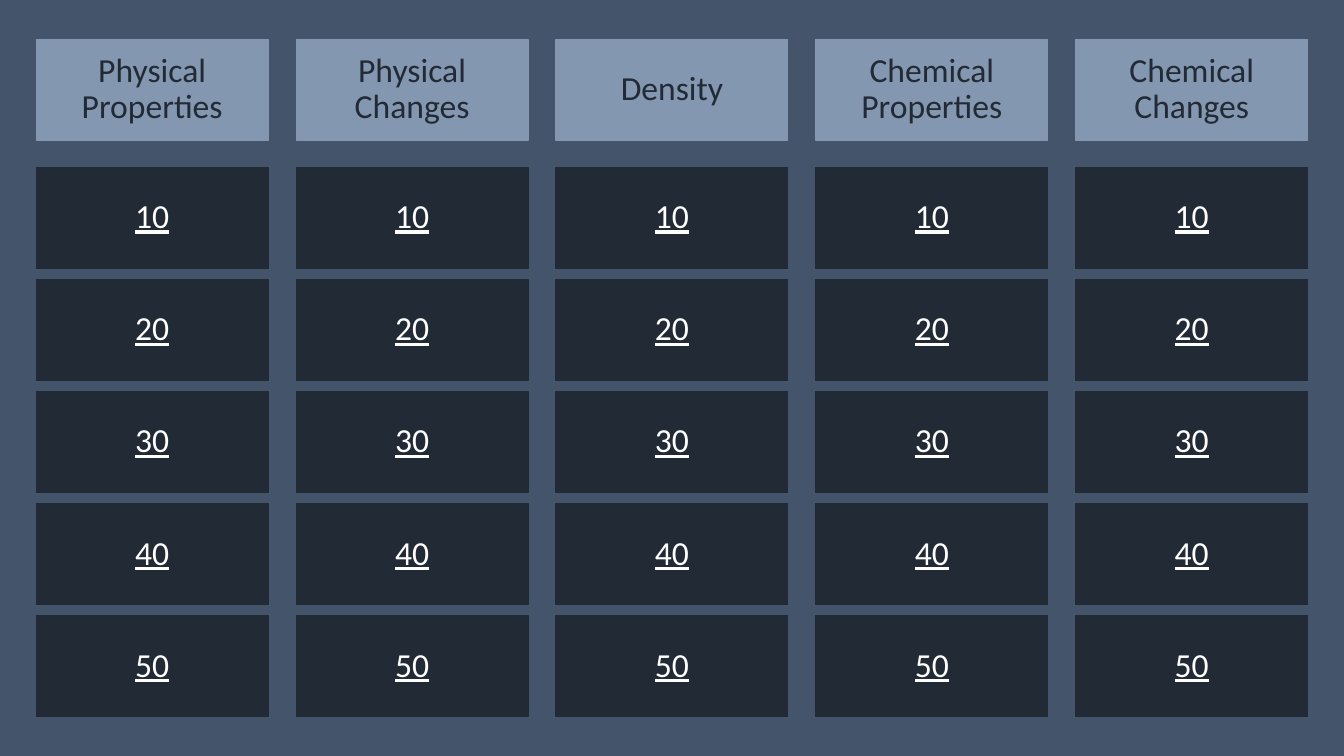
"""Build a quiz board with five topics and five point values each."""
import dataclasses

import pptx
import pptx.dml.color
import pptx.enum.shapes
import pptx.enum.text
import pptx.slide
import pptx.util

RGBColor = pptx.dml.color.RGBColor
BACK = RGBColor(0x44, 0x54, 0x6A)
STEEL = RGBColor(0x84, 0x97, 0xB0)
NAVY = RGBColor(0x22, 0x2A, 0x35)
WHITE = RGBColor(0xFF, 0xFF, 0xFF)

TOPICS = ["Physical Properties", "Physical Changes", "Density",
          "Chemical Properties", "Chemical Changes"]
POINTS = [10, 20, 30, 40, 50]

LEFT, RIGHT = 0.36, 10.67
HEAD, TOP, BOTTOM = 0.39, 1.66, 6.11
WIDTH, HEIGHT = 2.3, 1.0
COL_STEP = (RIGHT - LEFT) / (len(TOPICS) - 1)
ROW_STEP = (BOTTOM - TOP) / (len(POINTS) - 1)


@dataclasses.dataclass(frozen=True)
class Style:
    fill: RGBColor
    ink: RGBColor
    under: bool


@dataclasses.dataclass(frozen=True)
class Tile:
    text: str
    col: int
    row: int
    style: Style

    @property
    def left(self) -> float:
        return LEFT + self.col * COL_STEP

    @property
    def top(self) -> float:
        return TOP + (self.row - 1) * ROW_STEP if self.row else HEAD


TOPIC = Style(STEEL, NAVY, False)
POINT = Style(NAVY, WHITE, True)


def draw_tile(slide: pptx.slide.Slide, tile: Tile) -> None:
    box = [pptx.util.Inches(n) for n in (tile.left, tile.top, WIDTH, HEIGHT)]
    shape = slide.shapes.add_shape(pptx.enum.shapes.MSO_SHAPE.RECTANGLE, *box)
    shape.shadow.inherit = False
    shape.fill.solid()
    shape.fill.fore_color.rgb = tile.style.fill
    shape.line.color.rgb = tile.style.fill
    shape.line.width = pptx.util.Pt(0.75)
    frame = shape.text_frame
    frame.text = tile.text
    frame.word_wrap = True
    frame.vertical_anchor = pptx.enum.text.MSO_ANCHOR.MIDDLE
    para = frame.paragraphs[0]
    para.alignment = pptx.enum.text.PP_ALIGN.CENTER
    para.line_spacing = 0.9
    font = para.runs[0].font
    font.name = "Calibri"
    font.size = pptx.util.Pt(24)
    font.color.rgb = tile.style.ink
    font.underline = tile.style.under


def main() -> None:
    deck = pptx.Presentation()
    deck.slide_width = pptx.util.Inches(13.33)
    deck.slide_height = pptx.util.Inches(7.5)
    slide = deck.slides.add_slide(deck.slide_layouts[6])
    slide.background.fill.solid()
    slide.background.fill.fore_color.rgb = BACK
    for col, topic in enumerate(TOPICS):
        draw_tile(slide, Tile(topic, col, 0, TOPIC))
        for row, point in enumerate(POINTS, start=1):
            draw_tile(slide, Tile(str(point), col, row, POINT))
    deck.save("out.pptx")


if __name__ == "__main__":
    main()
